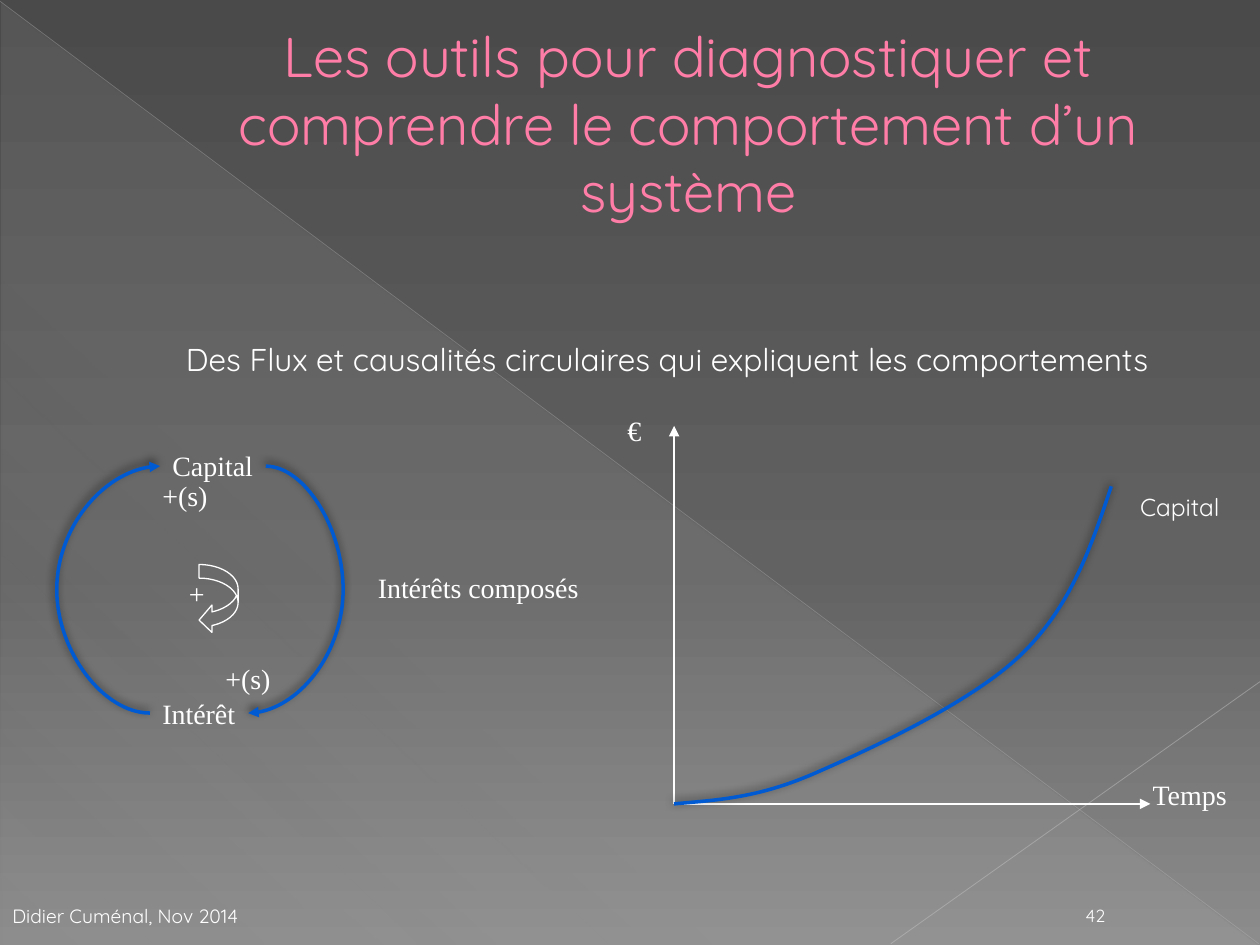
from dataclasses import dataclass

from lxml import etree
from pptx import Presentation
from pptx.dml.color import RGBColor
from pptx.enum.shapes import MSO_CONNECTOR, MSO_SHAPE
from pptx.enum.text import MSO_ANCHOR, PP_ALIGN
from pptx.oxml.ns import qn
from pptx.util import Inches, Pt

LINE, CURVE = MSO_CONNECTOR.STRAIGHT, MSO_CONNECTOR.CURVE
TRIANGLE, BEND = MSO_SHAPE.RIGHT_TRIANGLE, MSO_SHAPE.CURVED_LEFT_ARROW
TOP, MIDDLE, BOTTOM = MSO_ANCHOR.TOP, MSO_ANCHOR.MIDDLE, MSO_ANCHOR.BOTTOM
LEFT, CENTER = PP_ALIGN.LEFT, PP_ALIGN.CENTER


@dataclass(frozen=True)
class Theme:
    sans: str = "Quicksand"
    serif: str = "Times New Roman"
    white: str = "FFFFFF"
    pink: str = "FF7DA7"
    edge: str = "B12761"
    blue: str = "005BD3"
    black: str = "000000"
    veil: str = "D2D2D2"
    ray: str = "BFBFBF"
    beam: str = "C6C6C6"
    back: tuple = ("4A4A4A", "626262", "8C8C8C")
    title: float = 32
    head: float = 18
    label: float = 16
    note: float = 14
    foot: float = 11
    page: float = 10
    thin: float = 0.75
    bold: float = 2


T = Theme()


@dataclass(frozen=True)
class Label:
    text: str
    box: tuple
    size: float = T.label
    font: str = T.serif
    color: str = T.white
    align: PP_ALIGN = LEFT
    anchor: MSO_ANCHOR = TOP
    wrap: bool = False
    indent: float = 0
    edge: str = ""


@dataclass(frozen=True)
class Link:
    start: tuple
    end: tuple
    color: str = T.white
    width: float = T.thin
    alpha: int = 100
    head: bool = False
    bulge: float = 0


def node(parent, tag: str, **attrs):
    return etree.SubElement(parent, qn(tag), {k: str(v) for k, v in attrs.items()})


def tint(parent, color: str, alpha: int = 100) -> None:
    clr = node(parent, "a:srgbClr", val=color)
    if alpha < 100:
        node(clr, "a:alpha", val=alpha * 1000)


def blend(fill, angle: int, stops: list) -> None:
    fill.gradient()
    fill.gradient_angle = 360 - angle
    group = fill.gradient_stops[0]._gs.getparent()
    for old in list(group):
        group.remove(old)
    for pos, color, alpha in stops:
        tint(node(group, "a:gs", pos=pos * 1000), color, alpha)


def stroke(line, color: str, width: float) -> None:
    line.color.rgb = RGBColor.from_string(color)
    line.width = Pt(width)


def glow(props) -> None:
    for old in props.findall(qn("a:effectLst")):
        props.remove(old)
    shade = node(node(props, "a:effectLst"), "a:outerShdw", blurRad=Pt(5),
                 dist=Pt(2), dir=245 * 60000, algn="tl", rotWithShape=0)
    tint(shade, T.black, 50)


def write(slide, item: Label) -> None:
    box = slide.shapes.add_textbox(*map(Inches, item.box))
    frame = box.text_frame
    frame.text = item.text
    frame.word_wrap = item.wrap
    frame.vertical_anchor = item.anchor
    para = frame.paragraphs[0]
    para.alignment = item.align
    if item.indent:
        props = para._p.get_or_add_pPr()
        props.set("marL", str(Inches(item.indent)))
        props.set("indent", "0")
    font = para.runs[0].font
    font.name, font.size = item.font, Pt(item.size)
    font.color.rgb = RGBColor.from_string(item.color)
    if item.edge:
        line = etree.Element(qn("a:ln"), w=str(Pt(0.5)))
        tint(node(line, "a:solidFill"), item.edge)
        font._element.insert(0, line)


def join(slide, item: Link) -> None:
    kind = CURVE if item.bulge else LINE
    link = slide.shapes.add_connector(kind, *map(Inches, item.start + item.end))
    stroke(link.line, item.color, item.width)
    props = link._element.spPr
    line = props.find(qn("a:ln"))
    if item.alpha < 100:
        node(line.find(".//" + qn("a:srgbClr")), "a:alpha", val=item.alpha * 1000)
    if item.head:
        node(line, "a:tailEnd", type="triangle")
    if item.bulge:
        guides = props.find(qn("a:prstGeom")).get_or_add_avLst()
        node(guides, "a:gd", name="adj1", fmla=f"val {round(item.bulge * 100000)}")
        glow(props)
    else:
        node(props, "a:effectLst")


def preset(slide, kind: MSO_SHAPE, box: tuple):
    shape = slide.shapes.add_shape(kind, *map(Inches, box))
    shape.shadow.inherit = False
    return shape


def growth(slide, points: list) -> None:
    places = [(Inches(x), Inches(y)) for x, y in points]
    pen = slide.shapes.build_freeform(*places[0])
    pen.add_line_segments(places[1:], close=False)
    shape = pen.convert_to_shape()
    shape.fill.background()
    stroke(shape.line, T.blue, T.bold)
    props = shape._element.spPr
    route = props.find(".//" + qn("a:path"))
    steps = route.findall(qn("a:lnTo"))
    for i in range(0, len(steps), 3):
        bend = node(route, "a:cubicBezTo")
        for step in steps[i:i + 3]:
            bend.append(step[0])
            route.remove(step)
    glow(props)


RAYS = [
    Link((0, 0.01), (9.99, 7.49), T.ray, 0.39, 35),
    Link((10, 5.41), (7.07, 7.49), T.beam, 0.47, 45),
]
LINKS = [
    Link((2.11, 3.7), (1.97, 5.66), T.blue, T.bold, head=True, bulge=-4.38),
    Link((1.19, 5.66), (1.27, 3.7), T.blue, T.bold, head=True, bulge=-9.26),
    Link((5.35, 6.38), (5.35, 3.38), head=True),
    Link((5.35, 6.38), (9.13, 6.38), head=True),
]
LABELS = [
    Label("Didier Cuménal, Nov 2014", (0, 7.13, 2.14, 0.29), T.foot, T.sans),
    Label("42", (7.53, 7.07, 2.33, 0.33), T.page, T.sans,
          align=CENTER, anchor=BOTTOM, wrap=True),
    Label("Des Flux et causalités circulaires qui expliquent les comportements",
          (0.13, 2.65, 9.8, 0.4), T.head, T.sans,
          align=CENTER, anchor=MIDDLE, wrap=True, indent=0.53),
    Label("Capital", (1.27, 3.51, 0.84, 0.37)),
    Label("Intérêt", (1.19, 5.48, 0.78, 0.37)),
    Label("+(s)", (1.69, 5.2, 0.56, 0.37)),
    Label("+(s)", (1.19, 3.75, 0.56, 0.37)),
    Label("Temps", (9.05, 6.12, 0.8, 0.37)),
    Label("€", (4.88, 3.23, 0.31, 0.37)),
    Label("Intérêts composés", (2.9, 4.48, 1.8, 0.37)),
    Label("+", (1.4, 4.53, 0.32, 0.37)),
    Label("Capital", (8.95, 3.86, 0.91, 0.34), T.note, T.sans),
    Label("Les outils pour diagnostiquer et comprendre le comportement d’un système",
          (0.43, 0.21, 9.54, 1.53), T.title, T.sans, T.pink,
          CENTER, MIDDLE, True, 0.53, T.edge),
]
GROWTH = [(5.35, 6.38), (5.67, 6.35), (6, 6.34), (6.46, 6.14), (6.92, 5.94),
          (7.72, 5.57), (8.11, 5.19), (8.5, 4.81), (8.66, 4.34), (8.82, 3.86)]


def main() -> None:
    deck = Presentation()
    deck.slide_width, deck.slide_height = Inches(10), Inches(7.5)
    slide = deck.slides.add_slide(deck.slide_layouts[6])
    blend(slide.background.fill, 90, [(p, c, 100) for p, c in zip((0, 60, 100), T.back)])
    veil = preset(slide, TRIANGLE, (0.01, 0.02, 9.98, 7.48))
    blend(veil.fill, 133, [(0, T.veil, 10), (70, T.veil, 8), (100, T.veil, 1)])
    veil.line.fill.background()
    for item in RAYS + LINKS:
        join(slide, item)
    growth(slide, GROWTH)
    loop = preset(slide, BEND, (1.58, 4.48, 0.31, 0.55))
    for i, value in enumerate((0.35, 0.7, 0.33)):
        loop.adjustments[i] = value
    loop.fill.background()
    stroke(loop.line, T.white, T.thin)
    for item in LABELS:
        write(slide, item)
    deck.save("out.pptx")


if __name__ == "__main__":
    main()
